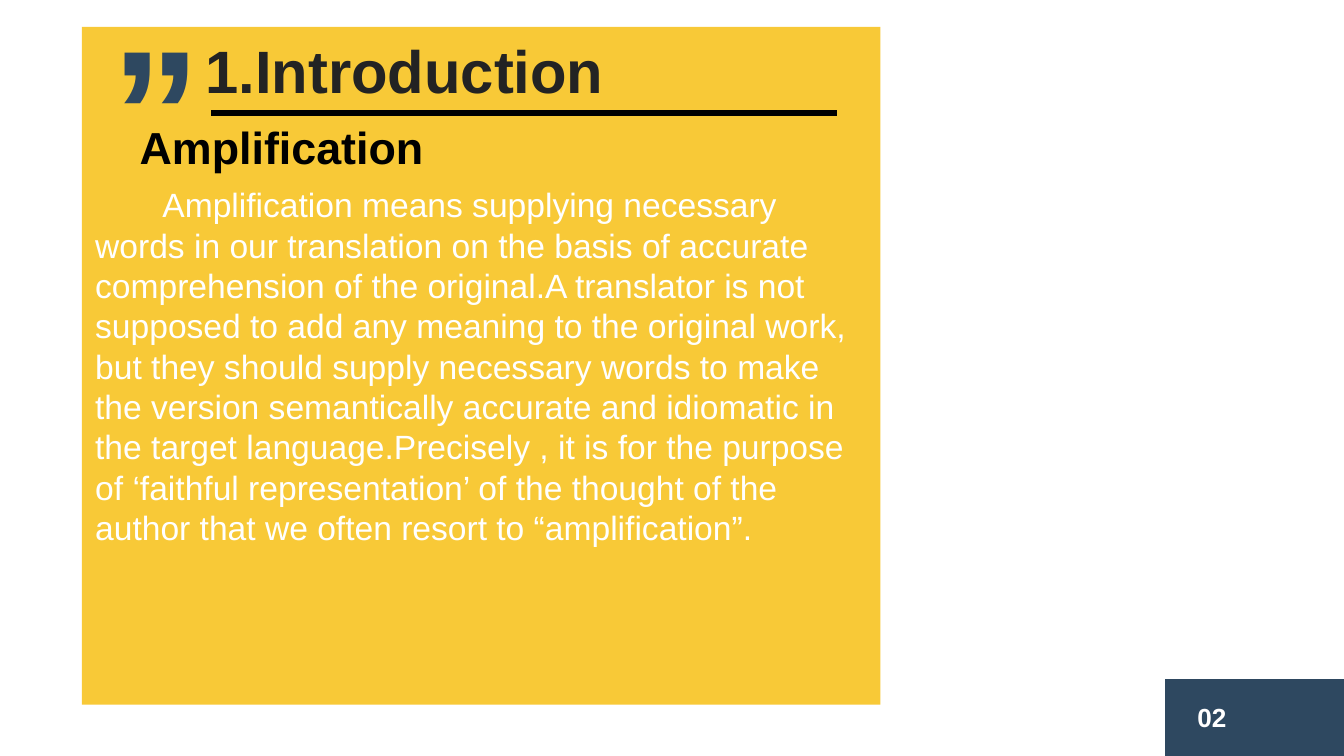
from lxml import etree
from pptx import Presentation
from pptx.dml.color import RGBColor
from pptx.enum.shapes import MSO_CONNECTOR, MSO_SHAPE
from pptx.enum.text import MSO_ANCHOR, MSO_AUTO_SIZE, PP_ALIGN
from pptx.oxml.ns import qn
from pptx.util import Cm, Pt

RECTANGLE = MSO_SHAPE.RECTANGLE
STRAIGHT = MSO_CONNECTOR.STRAIGHT
TOP, MIDDLE = MSO_ANCHOR.TOP, MSO_ANCHOR.MIDDLE
LEFT = PP_ALIGN.LEFT
NO_AUTOFIT = MSO_AUTO_SIZE.NONE

# Content
HEADING = "1.Introduction"
TOPIC = "Amplification"
EXPLANATION = (
    "Amplification means supplying necessary words in our translation on the "
    "basis of accurate comprehension of the original.A translator is not "
    "supposed to add any meaning to the original work, but they should supply "
    "necessary words to make the version semantically accurate and idiomatic "
    "in the target language.Precisely , it is for the purpose of ‘faithful "
    "representation’ of the thought of the author that we often resort to "
    "“amplification”."
)
QUOTE_MARK = "”"
PAGE_NUMBER = "02"

YELLOW, NAVY, CHARCOAL = "F8C937", "2E4860", "232323"
BLACK, WHITE = "000000", "FFFFFF"

# Boxes in cm: left, top, width, height
PANEL = (1.55, 0.51, 15.09, 12.8)
QUOTE_BOX = (1.85, -0.18, 9.96, 4.37)
PAGE_BLOCK = (22.02, 12.83, 3.38, 1.5)
PAGE_BOX = (22.38, 13.13, 1.27, 0.86)
HEADING_BOX = (3.63, 0.51, 10.92, 1.63)
TOPIC_BOX = (2.39, 2.13, 12.17, 2.06)
RULE_LEFT, RULE_RIGHT, RULE_TOP = 3.99, 15.82, 2.13


def colour(hex_code):
    return RGBColor.from_string(hex_code)


def box_cm(box):
    return [Cm(length) for length in box]


def write(shape, text, size, hex_code, bold=True, anchor=TOP):
    frame = shape.text_frame
    frame.text = text
    frame.word_wrap = True
    frame.auto_size = NO_AUTOFIT
    frame.vertical_anchor = anchor
    paragraph = frame.paragraphs[0]
    paragraph.alignment = LEFT
    font = paragraph.font
    font.name, font.size, font.bold = "Arial", Pt(size), bold
    font.color.rgb = colour(hex_code)
    return paragraph


def add_block(slide, box, hex_code):
    block = slide.shapes.add_shape(RECTANGLE, *box_cm(box))
    block.shadow.inherit = False
    block.fill.solid()
    block.fill.fore_color.rgb = colour(hex_code)
    block.line.fill.background()
    return block


def add_label(slide, box, *style):
    write(slide.shapes.add_textbox(*box_cm(box)), *style)


prs = Presentation()
prs.slide_width, prs.slide_height = Cm(25.4), Cm(14.28)
slide = prs.slides.add_slide(prs.slide_layouts[5])

# Panel with the explanation
panel = add_block(slide, PANEL, YELLOW)
explanation = write(panel, EXPLANATION, 18, WHITE, bold=False, anchor=MIDDLE)
explanation._p.get_or_add_pPr().set("indent", str(Cm(1.27)))

# Quote mark and page number
add_label(slide, QUOTE_BOX, QUOTE_MARK, 96, NAVY)
add_block(slide, PAGE_BLOCK, NAVY)
add_label(slide, PAGE_BOX, PAGE_NUMBER, 14, WHITE)

# Heading, brought in front of the panel
heading = slide.shapes.title
heading.left, heading.top, heading.width, heading.height = box_cm(HEADING_BOX)
write(heading, HEADING, 32, CHARCOAL)
slide.shapes._spTree.append(heading._element)

# Topic and the rule above it
add_label(slide, TOPIC_BOX, TOPIC, 24, BLACK)
rule = slide.shapes.add_connector(
    STRAIGHT, *box_cm((RULE_LEFT, RULE_TOP, RULE_RIGHT, RULE_TOP)))
rule.line.color.rgb = colour(BLACK)
rule.line.width = Pt(3)
etree.SubElement(rule._element.spPr, qn("a:effectLst"))

prs.save("out.pptx")
